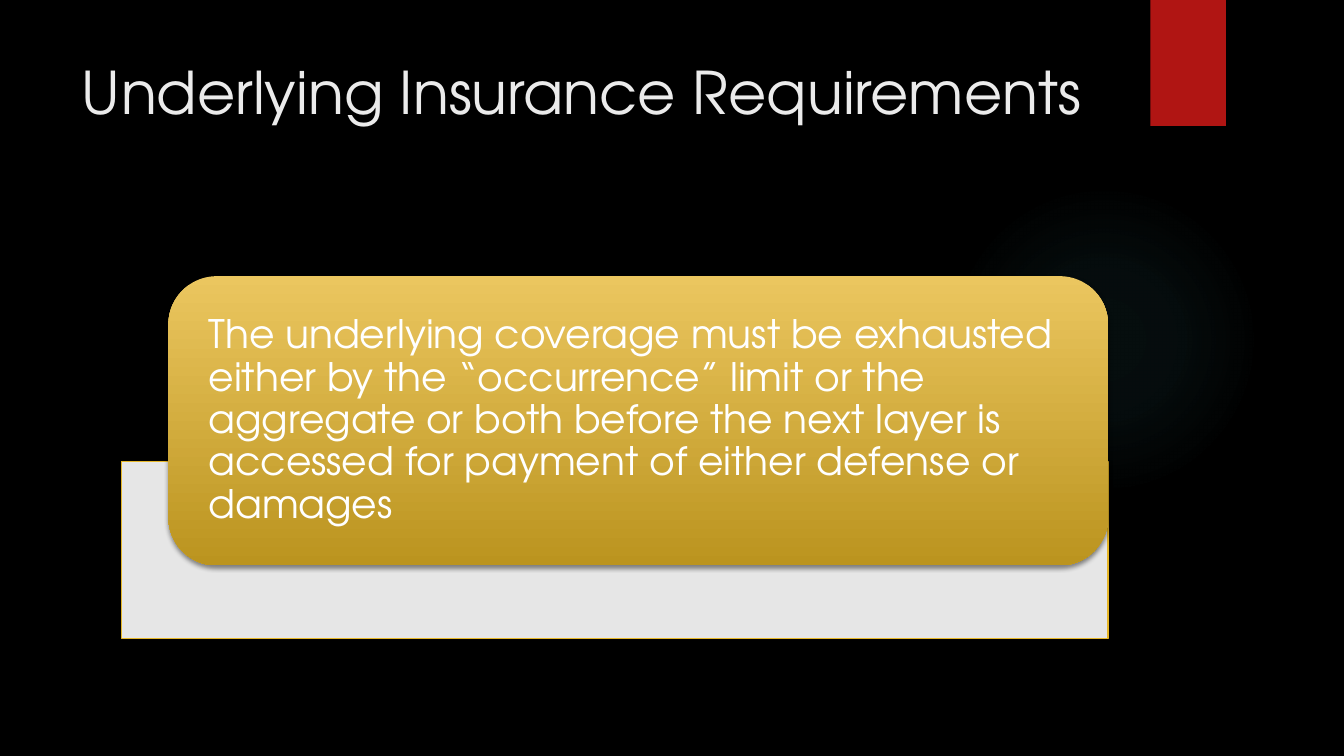
from lxml import etree
from pptx import Presentation
from pptx.dml.color import RGBColor
from pptx.enum.shapes import MSO_SHAPE
from pptx.enum.text import MSO_ANCHOR, PP_ALIGN
from pptx.oxml import parse_xml
from pptx.oxml.ns import nsdecls, qn
from pptx.util import Inches, Pt

RECTANGLE, ROUNDED, OVAL = MSO_SHAPE.RECTANGLE, MSO_SHAPE.ROUNDED_RECTANGLE, MSO_SHAPE.OVAL
TOP, MIDDLE, LEFT = MSO_ANCHOR.TOP, MSO_ANCHOR.MIDDLE, PP_ALIGN.LEFT
TITLE_ONLY = 5
FONT = "TeX Gyre Adventor"
LINEAR_DOWN = '<a:lin ang="5400000" scaled="0"/>'
RADIAL = ('<a:path path="circle"><a:fillToRect l="50000" t="50000" '
          'r="50000" b="50000"/></a:path>')
REQUIREMENT = ("The underlying coverage must be exhausted either by the “occurrence” limit "
               "or the aggregate or both before the next layer is accessed for payment of "
               "either defense or damages")


def rgb(hex_color):
    return RGBColor.from_string(hex_color)


def add_panel(shapes, kind, box, color=None):
    panel = shapes.add_shape(kind, *map(Inches, box))
    panel.shadow.inherit = False
    panel.line.fill.background()
    if color:
        panel.fill.solid()
        panel.fill.fore_color.rgb = rgb(color)
    return panel


def set_opacity(panel, percent):
    color = panel.fill._xPr.find(qn("a:solidFill"))[0]
    etree.SubElement(color, qn("a:alpha"), val=str(percent * 1000))


def set_gradient(panel, stops, direction):
    """Fill with stops given as (position %, colour, opacity %)."""
    stop_xml = "".join(
        f'<a:gs pos="{position * 1000}"><a:srgbClr val="{color}">'
        f'<a:alpha val="{opacity * 1000}"/></a:srgbClr></a:gs>'
        for position, color, opacity in stops)
    gradient = parse_xml(f'<a:gradFill {nsdecls("a")} rotWithShape="1">'
                         f'<a:gsLst>{stop_xml}</a:gsLst>{direction}</a:gradFill>')
    panel._element.spPr.find(qn("a:prstGeom")).addnext(gradient)


def add_shadow(panel):
    effects = panel._element.spPr.find(qn("a:effectLst"))
    effects.append(parse_xml(
        f'<a:outerShdw {nsdecls("a")} blurRad="{Pt(3)}" dist="{Pt(2)}" dir="5400000" '
        'rotWithShape="0"><a:srgbClr val="000000"><a:alpha val="45000"/></a:srgbClr>'
        '</a:outerShdw>'))


def write_text(holder, text, size, color, anchor):
    frame = holder.text_frame
    frame.word_wrap = True
    frame.vertical_anchor = anchor
    frame.text = text
    paragraph = frame.paragraphs[0]
    paragraph.alignment = LEFT
    font = paragraph.runs[0].font
    font.name, font.size, font.color.rgb = FONT, Pt(size), rgb(color)
    return paragraph


def add_backdrop(slide):
    slide.background.fill.solid()
    slide.background.fill.fore_color.rgb = rgb("000000")
    glow = add_panel(slide.shapes, OVAL, (9.41, 1.83, 3.08, 3.08))
    set_gradient(glow, [(0, "50B9C1", 7), (36, "50B9C1", 6), (69, "50B9C1", 0)], RADIAL)
    add_shadow(add_panel(slide.shapes, RECTANGLE, (11.41, 0, 0.75, 1.25), "B01513"))


def add_title(slide, text):
    title = slide.shapes.title
    title.left, title.top, title.width, title.height = map(Inches, (0.71, 0.5, 10.29, 1.53))
    write_text(title, text, 42, "EBEBEB", TOP)


def add_requirement_card(slide, text):
    card = slide.shapes.add_group_shape().shapes
    base = add_panel(card, RECTANGLE, (1.21, 4.58, 9.78, 1.76), "FFFFFF")
    set_opacity(base, 90)
    base.line.color.rgb = rgb("E6B729")
    base.line.width = Pt(0.75)
    add_shadow(base)

    front = add_panel(card, ROUNDED, (1.67, 2.74, 9.32, 2.87))
    set_gradient(front, [(0, "EBC65F", 100), (100, "BB941F", 100)], LINEAR_DOWN)
    add_shadow(front)

    statement = card.add_textbox(*map(Inches, (1.81, 2.88, 9.04, 2.59)))
    frame = statement.text_frame
    frame.margin_left = frame.margin_right = Inches(0.26)
    frame.margin_top = frame.margin_bottom = 0
    paragraph = write_text(statement, text, 28, "FFFFFF", MIDDLE)
    paragraph.line_spacing = 0.9


def main():
    deck = Presentation()
    deck.slide_width, deck.slide_height = Inches(13.33), Inches(7.5)
    slide = deck.slides.add_slide(deck.slide_layouts[TITLE_ONLY])
    add_backdrop(slide)
    add_title(slide, "Underlying Insurance Requirements")
    add_requirement_card(slide, REQUIREMENT)
    deck.save("out.pptx")


if __name__ == "__main__":
    main()
